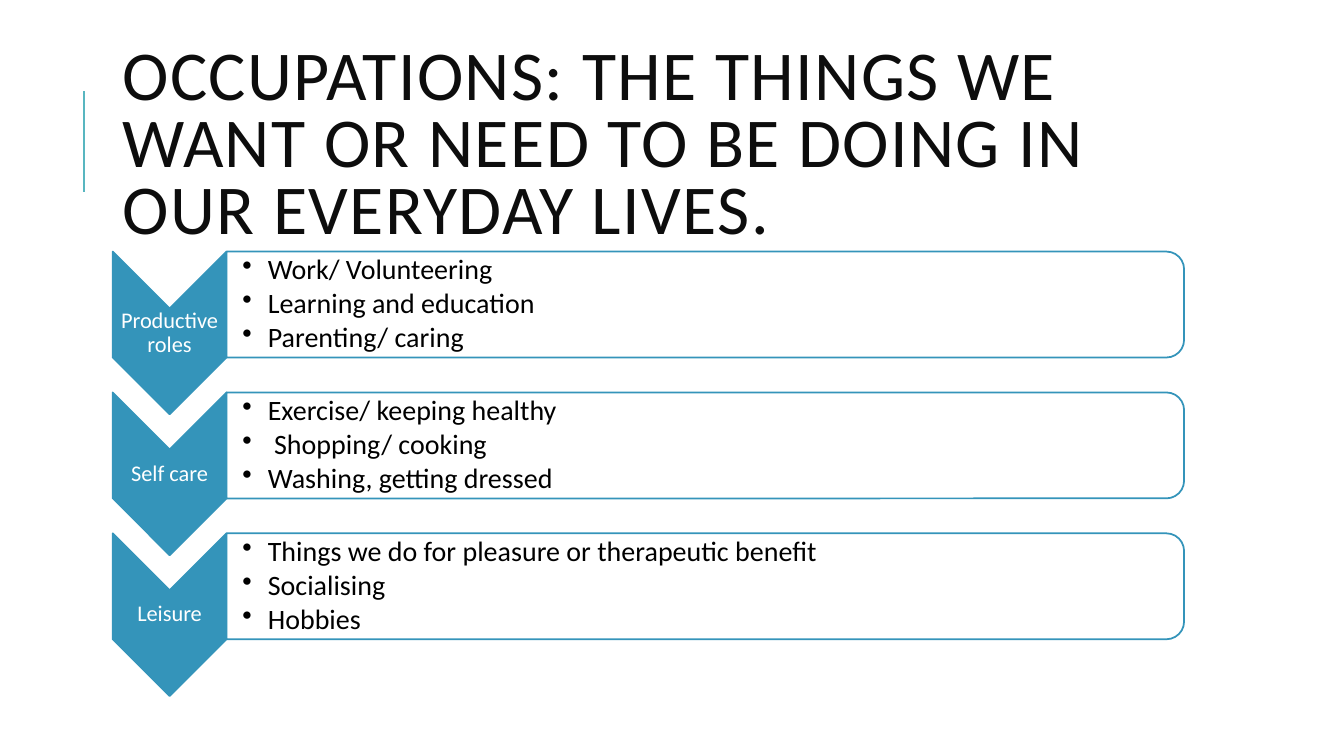
from lxml import etree
from pptx import Presentation
from pptx import util as u
from pptx.dml.color import RGBColor
from pptx.enum import shapes, text
from pptx.oxml.ns import qn

HEADING = "OCCUPATIONS: THE THINGS WE WANT OR NEED TO BE DOING IN OUR EVERYDAY LIVES."
OCCUPATIONS = [
    ("Productive roles", ["Work/ Volunteering", "Learning and education", "Parenting/ caring"]),
    ("Self care", ["Exercise/ keeping healthy", " Shopping/ cooking", "Washing, getting dressed"]),
    ("Leisure", ["Things we do for pleasure or therapeutic benefit", "Socialising", "Hobbies"]),
]
FONT = "Calibri"
BLUE, TEAL, WHITE, BLACK, INK = "3494BA", "58B6C0", "FFFFFF", "000000", "0D0D0D"

# Lengths in centimetres
LEFT, TOP, PITCH = 2.84, 6.34, 3.55
ARROW_W, ARROW_H = 2.87, 4.1
PANEL_W, PANEL_H = 24.13, 2.67
INSET = 0.03


def colour(value):
    return RGBColor.from_string(value)


def add_turned(slide, preset, left, top, width, height, fill):
    """Add a shape turned a quarter clockwise that fills the given upright area."""
    shape = slide.shapes.add_shape(
        preset,
        u.Cm(left + (width - height) / 2), u.Cm(top + (height - width) / 2),
        u.Cm(height), u.Cm(width))
    shape.rotation = 90
    shape.shadow.inherit = False
    shape.fill.solid()
    shape.fill.fore_color.rgb = colour(fill)
    shape.line.color.rgb = colour(BLUE)
    shape.line.width = u.Pt(1.25)
    return shape


def add_text(slide, area, lines, size, ink, line_spacing, after=0, margins=None):
    """Add a vertically centred text box, one paragraph per line."""
    box = slide.shapes.add_textbox(*map(u.Cm, area))
    frame = box.text_frame
    frame.word_wrap = True
    frame.vertical_anchor = text.MSO_ANCHOR.MIDDLE
    if margins:
        (frame.margin_left, frame.margin_top,
         frame.margin_right, frame.margin_bottom) = map(u.Cm, margins)
    frame.text = "\n".join(lines)
    for paragraph in frame.paragraphs:
        paragraph.line_spacing = line_spacing
        paragraph.space_after = u.Pt(after)
        font = paragraph.runs[0].font
        font.name, font.size = FONT, u.Pt(size)
        font.color.rgb = colour(ink)
    return frame.paragraphs


def add_bullet(paragraph):
    paragraph.level = 1
    properties = paragraph._p.get_or_add_pPr()
    properties.set("marL", str(u.Cm(0.64)))
    properties.set("indent", str(-u.Cm(0.64)))
    etree.SubElement(properties, qn("a:buChar"), char="•")


def add_occupation(slide, top, label, examples):
    add_turned(slide, shapes.MSO_SHAPE.CHEVRON, LEFT, top, ARROW_W, ARROW_H, BLUE)
    label_area = (LEFT, top + ARROW_W / 2, ARROW_W, ARROW_H - ARROW_W)
    for paragraph in add_text(slide, label_area, [label], 16, WHITE, 0.9, 5.6, [INSET] * 4):
        paragraph.alignment = text.PP_ALIGN.CENTER

    panel_left = LEFT + ARROW_W
    panel = add_turned(slide, shapes.MSO_SHAPE.ROUND_2_SAME_RECTANGLE,
                       panel_left, top, PANEL_W, PANEL_H, WHITE)
    panel_fill = panel._element.spPr.find(qn("a:solidFill"))
    etree.SubElement(panel_fill[0], qn("a:alpha"), val="90000")
    examples_area = (panel_left, top + 0.13, PANEL_W - 0.13, PANEL_H - 0.26)
    for paragraph in add_text(slide, examples_area, examples, 20, BLACK, 0.9, 2.7,
                              (0.4, INSET, INSET, INSET)):
        add_bullet(paragraph)


def main():
    deck = Presentation()
    deck.slide_width, deck.slide_height = u.Cm(33.87), u.Cm(19.05)
    slide = deck.slides.add_slide(deck.slide_layouts[6])

    accent = slide.shapes.add_connector(
        shapes.MSO_CONNECTOR.STRAIGHT, u.Cm(2.12), u.Cm(4.83), u.Cm(2.12), u.Cm(2.29))
    accent.line.color.rgb = colour(TEAL)
    accent.line.width = u.Pt(1.5)
    etree.SubElement(accent._element.spPr, qn("a:effectLst"))

    heading = add_text(slide, (LEFT, 1.63, 27, 4.17), [HEADING], 50, INK, 0.8)
    heading[0].runs[0]._r.get_or_add_rPr().set("spc", "100")

    for row, (label, examples) in enumerate(OCCUPATIONS):
        add_occupation(slide, TOP + row * PITCH, label, examples)

    deck.save("out.pptx")


if __name__ == "__main__":
    main()
